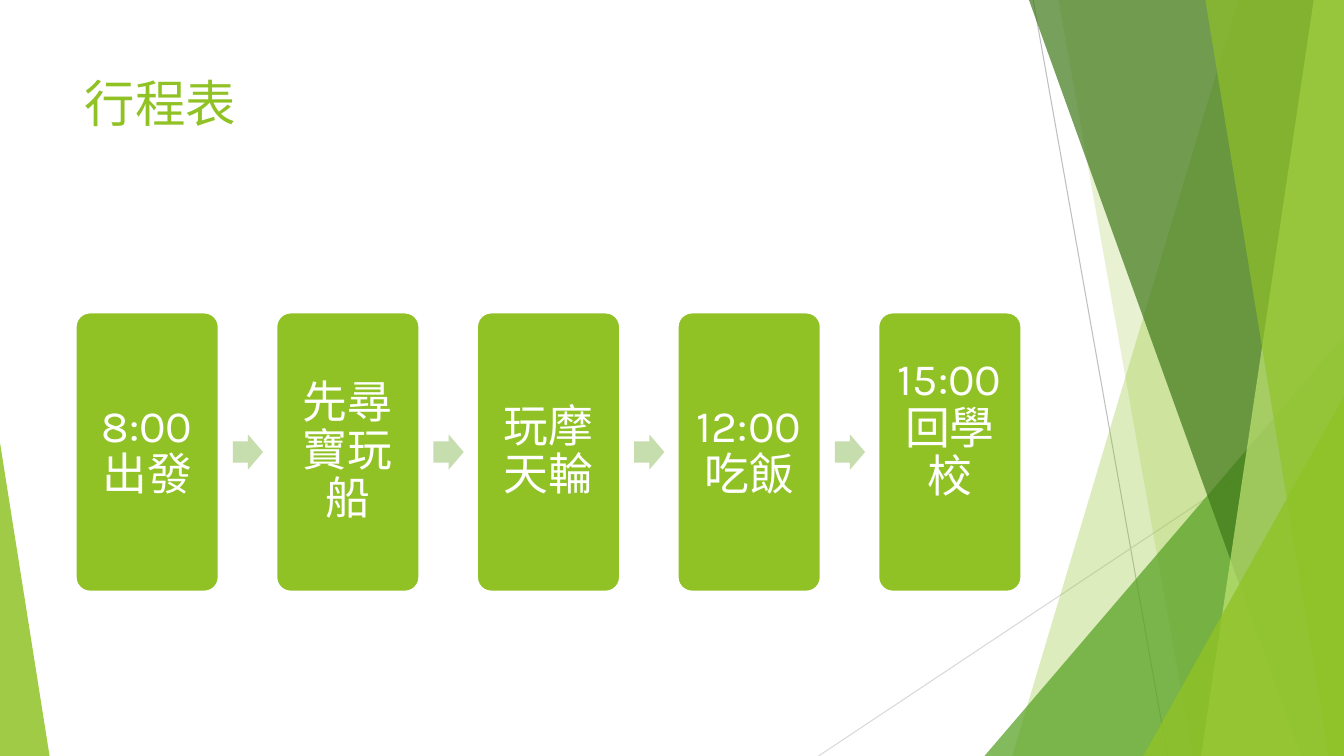
"""Build the day's schedule slide with a faceted green border."""
from dataclasses import dataclass
from typing import Any

from lxml import etree
from pptx import Presentation
from pptx.dml.color import RGBColor
from pptx.enum.shapes import MSO_CONNECTOR, MSO_SHAPE
from pptx.enum.text import MSO_ANCHOR, MSO_AUTO_SIZE, PP_ALIGN
from pptx.oxml.ns import qn
from pptx.util import Inches, Pt

CARD, ARROW = MSO_SHAPE.ROUNDED_RECTANGLE, MSO_SHAPE.RIGHT_ARROW
WEDGE, LINE = MSO_SHAPE.ISOSCELES_TRIANGLE, MSO_CONNECTOR.STRAIGHT
TOP, MIDDLE = MSO_ANCHOR.TOP, MSO_ANCHOR.MIDDLE
LEFT, CENTER = PP_ALIGN.LEFT, PP_ALIGN.CENTER
FIXED = MSO_AUTO_SIZE.NONE

COLS, ROWS = 160, 90
CELL = Inches(1 / 12)


@dataclass(frozen=True)
class Theme:
    """Colours, font and type sizes of the slide."""
    lime: str = "90C226"
    green: str = "54A021"
    dark: str = "3F7819"
    pale: str = "C0E474"
    arrow: str = "C6DDAD"
    white: str = "FFFFFF"
    gray: str = "BFBFBF"
    light: str = "D9D9D9"
    font: str = "Karla"
    title: int = 36
    body: int = 32


@dataclass(frozen=True)
class Box:
    """Place and size in grid cells."""
    left: float
    top: float
    width: float
    height: float


@dataclass(frozen=True)
class Facet:
    """Band from a slanted left edge to the right side of the slide."""
    head: float
    foot: float
    color: str
    alpha: int


@dataclass(frozen=True)
class Corner:
    """Triangle standing on the bottom edge, its peak at a share of its width."""
    left: float
    top: float
    width: float
    peak: int
    color: str
    alpha: int


@dataclass(frozen=True)
class Ray:
    """Thin line between two grid points."""
    start: tuple[float, float]
    end: tuple[float, float]
    color: str


@dataclass(frozen=True)
class Step:
    """One stop of the day, with spare room below its text."""
    text: str
    spare: float = 0


THEME = Theme()
RAYS = [Ray((123, 0), (139, ROWS), THEME.gray),
        Ray((COLS, 48.4), (97.45, ROWS), THEME.light)]
DECOR = [
    Facet(147.4, 120.5, THEME.lime, 30),
    Facet(126, 142, THEME.lime, 20),
    Corner(117.2, 40, 42.8, 1, THEME.green, 72),
    Facet(122.5, 154.9, THEME.dark, 70),
    Facet(156.4, 143, THEME.pale, 70),
    Facet(143.5, 158.2, THEME.lime, 65),
    Corner(136.1, 47.2, 23.9, 1, THEME.lime, 80),
    Corner(0, 52.7, 5.9, 0, THEME.lime, 85),
]
STEPS = [Step("8:00出發"), Step("先尋寶玩船"), Step("玩摩天輪"),
         Step("12:00吃飯"), Step("15:00回學校", 0.44)]
TITLE = Box(8.9, 8, 112.8, 17.3)
FIRST = Box(9, 37.2, 17.04, 33.24)
PITCH = 23.89
GAP = 18.72
HEAD = Box(FIRST.left + GAP, 51.72, 3.6, 4.2)


def cells(*counts: float) -> list[int]:
    """Turn grid cells into slide lengths."""
    return [round(count * CELL) for count in counts]


def style(item: Any, **values: Any) -> None:
    """Set each named format value on an item."""
    for name, value in values.items():
        setattr(item, name, value)


def paint(shape: Any, color: str, alpha: int = 100) -> None:
    """Fill a shape flat, with no line or shadow."""
    shape.shadow.inherit = False
    shape.fill.solid()
    shape.fill.fore_color.rgb = RGBColor.from_string(color)
    shape.line.fill.background()
    if alpha < 100:
        tint = shape._element.spPr.find(".//" + qn("a:srgbClr"))
        etree.SubElement(tint, qn("a:alpha")).set("val", str(alpha * 1000))


def preset(shapes: Any, kind: Any, box: Box, *adjust: float) -> Any:
    """Add a preset shape with its adjustments."""
    shape = shapes.add_shape(
        kind, *cells(box.left, box.top, box.width, box.height))
    for spot, value in enumerate(adjust):
        shape.adjustments[spot] = value
    return shape


def write(shape: Any, text: str, size: int, color: str,
          frame: dict[str, Any], para: dict[str, Any]) -> None:
    """Write one formatted paragraph into a shape."""
    body = shape.text_frame
    body.text = text
    style(body, word_wrap=True, auto_size=FIXED, **frame)
    line = body.paragraphs[0]
    style(line, **para)
    style(line.font, name=THEME.font, size=Pt(size))
    line.font.color.rgb = RGBColor.from_string(color)


def draw_ray(shapes: Any, ray: Ray) -> None:
    """Draw a thin line."""
    line = shapes.add_connector(LINE, *cells(*ray.start, *ray.end))
    line.line.width = Pt(0.75)
    line.line.color.rgb = RGBColor.from_string(ray.color)
    etree.SubElement(line._element.spPr, qn("a:effectLst"))


def draw_decor(shapes: Any, part: Facet | Corner) -> None:
    """Draw one clear piece of the border."""
    if isinstance(part, Facet):
        pen = shapes.build_freeform(*cells(part.head, 0))
        ends = [(COLS, 0), (COLS, ROWS), (part.foot, ROWS)]
        pen.add_line_segments([cells(*end) for end in ends], close=True)
        shape = pen.convert_to_shape()
    else:
        box = Box(part.left, part.top, part.width, ROWS - part.top)
        shape = preset(shapes, WEDGE, box, part.peak)
    paint(shape, part.color, part.alpha)


def draw_step(shapes: Any, order: int, step: Step) -> None:
    """Draw a card, and the arrow that leads to it."""
    shift = order * PITCH
    if order:
        box = Box(HEAD.left + shift - PITCH, HEAD.top, HEAD.width, HEAD.height)
        paint(preset(shapes, ARROW, box, 0.6, 0.5), THEME.arrow)
    box = Box(FIRST.left + shift, FIRST.top, FIRST.width, FIRST.height)
    card = preset(shapes, CARD, box, 0.1)
    paint(card, THEME.lime)
    card.line.color.rgb = RGBColor.from_string(THEME.white)
    card.line.width = Pt(1.5)
    pad = Inches(0.13)
    write(card, step.text, THEME.body, THEME.white,
          dict(vertical_anchor=MIDDLE, margin_left=pad, margin_right=pad,
               margin_top=pad, margin_bottom=pad + Inches(step.spare)),
          dict(alignment=CENTER, line_spacing=0.9))


def main() -> None:
    """Build and save the slide."""
    deck = Presentation()
    style(deck, slide_width=COLS * CELL, slide_height=ROWS * CELL)
    slide = deck.slides.add_slide(deck.slide_layouts[5])
    title, shapes = slide.shapes.title, slide.shapes
    left, top, width, height = cells(
        TITLE.left, TITLE.top, TITLE.width, TITLE.height)
    style(title, left=left, top=top, width=width, height=height)
    write(title, "行程表", THEME.title, THEME.lime,
          dict(vertical_anchor=TOP), dict(alignment=LEFT))
    for ray in RAYS:
        draw_ray(shapes, ray)
    for part in DECOR:
        draw_decor(shapes, part)
    for order, step in enumerate(STEPS):
        draw_step(shapes, order, step)
    deck.save("out.pptx")


if __name__ == "__main__":
    main()
